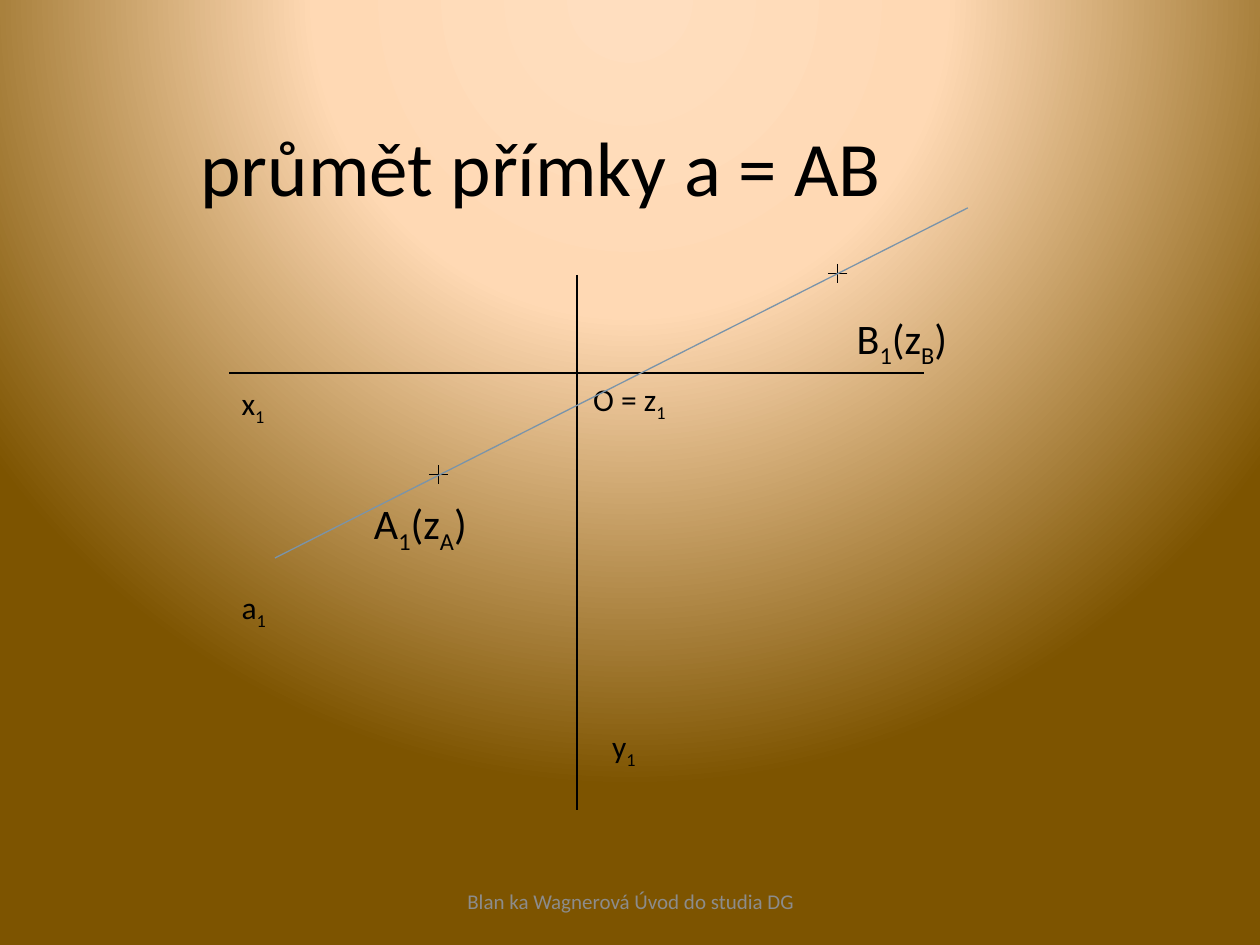
from lxml import etree
from pptx import Presentation
from pptx.dml.color import RGBColor
from pptx.enum.shapes import MSO_CONNECTOR
from pptx.enum.text import MSO_ANCHOR, PP_ALIGN
from pptx.oxml.ns import qn
from pptx.util import Cm, Pt

STRAIGHT = MSO_CONNECTOR.STRAIGHT
TOP, MIDDLE = MSO_ANCHOR.TOP, MSO_ANCHOR.MIDDLE
LEFT, CENTER = PP_ALIGN.LEFT, PP_ALIGN.CENTER

BLACK = RGBColor(0x00, 0x00, 0x00)
GRAY = RGBColor(0x8C, 0x8C, 0x8C)
BLUE = RGBColor(0x7A, 0x94, 0xAA)
GRADIENT = [
    (0, RGBColor(0xFF, 0xDE, 0xBF)),
    (40, RGBColor(0xFF, 0xD9, 0xB4)),
    (100, RGBColor(0x7D, 0x54, 0x00)),
]
FOCUS = {"l": 50, "t": -80, "r": 50, "b": 180}


def add_background(slide):
    fill = slide.background.fill
    fill.gradient()
    grad = slide.background._cSld.find(".//" + qn("a:gradFill"))
    for child in list(grad):
        grad.remove(child)
    stops = etree.SubElement(grad, qn("a:gsLst"))
    for pos, color in GRADIENT:
        gs = etree.SubElement(stops, qn("a:gs"), pos=str(pos * 1000))
        etree.SubElement(gs, qn("a:srgbClr"), val=str(color))
    circle = etree.SubElement(grad, qn("a:path"))
    circle.set("path", "circle")
    rect = etree.SubElement(circle, qn("a:fillToRect"))
    for side, value in FOCUS.items():
        rect.set(side, str(value * 1000))


def add_text(shapes, box, text, size, color=BLACK, anchor=TOP, align=LEFT):
    """Every second part of text between bars is a subscript."""
    tf = shapes.add_textbox(*map(Cm, box)).text_frame
    for name, value in {"word_wrap": True, "vertical_anchor": anchor}.items():
        setattr(tf, name, value)
    p = tf.paragraphs[0]
    p.alignment = align
    for i, part in enumerate(text.split("|")):
        r = p.add_run()
        r.text = part
        for name, value in {"name": "Calibri", "size": Pt(size)}.items():
            setattr(r.font, name, value)
        r.font.color.rgb = color
        if i % 2:
            r._r.get_or_add_rPr().set("baseline", "-25000")


def add_line(shapes, x1, y1, x2, y2, color=BLACK):
    line = shapes.add_connector(STRAIGHT, *map(Cm, (x1, y1, x2, y2)))
    line.line.color.rgb = color
    line.line.width = Pt(0.75)
    etree.SubElement(line._element.spPr, qn("a:effectLst"))


def add_cross(slide, x, y, arm=0.19):
    shapes = slide.shapes.add_group_shape().shapes
    add_line(shapes, x, y - arm, x, y + arm)
    add_line(shapes, x + arm, y, x - arm, y)


def add_axes(slide, left, top, width, height):
    shapes = slide.shapes.add_group_shape().shapes
    origin_x, origin_y = left + 7.01, top + 3.33
    add_line(shapes, left, origin_y, left + 14, origin_y)
    add_line(shapes, origin_x, top + 1.35, origin_x, top + height)
    labels = slide.shapes.add_group_shape().shapes
    for text, x, y, w in [
        ("O = z|1", 7.09, 3.35, 2.59),
        ("x|1", 0, 3.43, 1.8),
        ("y|1", 7.47, 10.34, 1.8),
    ]:
        add_text(labels, (left + x, top + y, w, 1.02), text, 18)


def add_projection(slide, left, top, width, height):
    for text, label_x, label_y, x, y in [
        ("A|1|(z|A|)", 2.67, 5.72, 4.22, 5.37),
        ("B|1|(z|B|)", 12.4, 1.98, 12.27, 1.32),
    ]:
        add_text(slide.shapes, (left + label_x, top + label_y, 3.61, 1.27), text, 24)
        add_cross(slide, left + x, top + y)
    add_line(slide.shapes, left + 0.92, top + 7.06, left + width, top, BLUE)
    add_text(slide.shapes, (left, top + 7.54, 1.27, 1.02), "a|1", 18)


def main():
    prs = Presentation()
    prs.slide_width, prs.slide_height = Cm(25.4), Cm(19.05)
    s = prs.slides.add_slide(prs.slide_layouts[6])
    add_background(s)
    add_text(s.shapes, (1.27, 0.76, 19.63, 5.16), "průmět přímky a = AB ", 44,
             anchor=MIDDLE, align=CENTER)
    add_text(s.shapes, (8.69, 17.65, 8.05, 1.02),
             "Blan ka Wagnerová Úvod do studia DG", 12, GRAY, MIDDLE, CENTER)
    diagram = (4.62, 4.19, 14.89, 12.14)
    add_axes(s, *diagram)
    add_projection(s, *diagram)
    prs.save("out.pptx")


if __name__ == "__main__":
    main()
